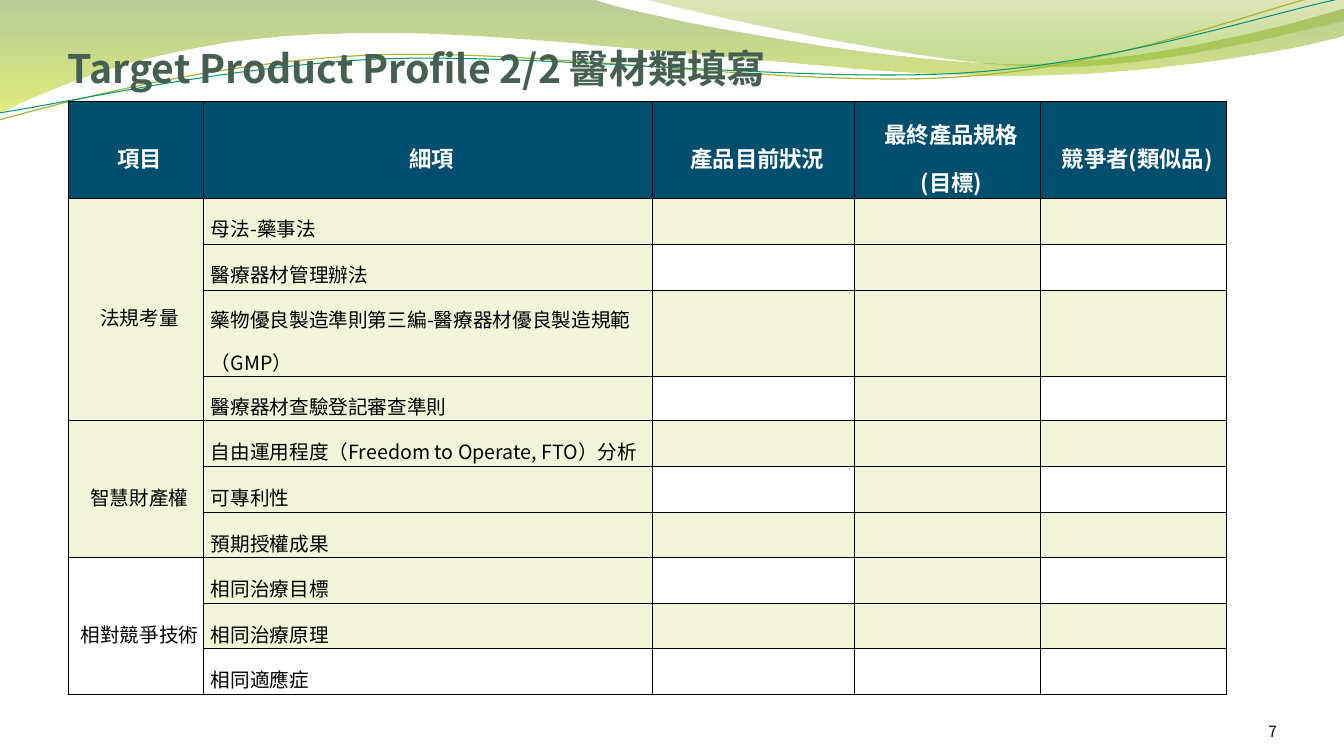
from dataclasses import dataclass
from math import cos, radians, sin

from lxml.etree import SubElement
from pptx import Presentation
from pptx.dml.color import RGBColor
from pptx.enum.text import MSO_ANCHOR as Anchor, PP_ALIGN as Align
from pptx.oxml import parse_xml
from pptx.oxml.ns import nsdecls, qn
from pptx.util import Pt


@dataclass(frozen=True)
class Theme:
    title_color: str = "455F51"
    ink: str = "000000"
    header_ink: str = "FFFFFF"
    header_fill: str = "004E6E"
    band_fill: str = "C0CF3A"
    band_opacity: int = 20
    olive: str = "A8B532"
    teal: str = "029676"
    # Gradient stops: position %, colour, opacity %
    wide_wave: tuple = ((0, "668F1B", 45), (100, "CAE00E", 55))
    right_wave: tuple = ((0, "99A719", 30), (80, "80B814", 45), (100, "80B814", 45))
    font: str = "Noto Sans CJK SC"
    number_font: str = "Noto Sans CJK TC"
    title_size: int = 28
    header_size: int = 16
    body_size: int = 14
    number_size: int = 11
    border_width: float = 0.75


def px(length):
    return round(length * 914400 / 100.8)


def turn(point, pivot, degrees):
    angle = radians(degrees)
    dx, dy = point[0] - pivot[0], point[1] - pivot[1]
    return (pivot[0] + dx * cos(angle) - dy * sin(angle),
            pivot[1] + dx * sin(angle) + dy * cos(angle))


class PageBuilder:
    def __init__(self, page, theme):
        self.page = page
        self.theme = theme

    def format_text(self, frame, size, color, bold=False, font=None, align=None):
        font = font or self.theme.font
        for para in frame.paragraphs:
            para.alignment = align
            for span in para.runs:
                span.font.size = Pt(size)
                span.font.bold = bold
                span.font.name = font
                span.font.color.rgb = RGBColor.from_string(color)
                SubElement(span.font._element, qn("a:ea")).set("typeface", font)

    def freeform(self, start, segments, close):
        """Draw one-point segments as lines and three-point segments as Bezier curves."""
        points = [(px(x), px(y)) for segment in segments for x, y in segment]
        builder = self.page.shapes.build_freeform(px(start[0]), px(start[1]), scale=1.0)
        builder.add_line_segments(points, close=close)
        shape = builder.convert_to_shape()
        shape.shadow.inherit = False
        lines = iter(list(shape.element.iter(qn("a:lnTo"))))
        for segment in segments:
            group = [next(lines) for _ in segment]
            if len(group) == 3:
                group[0].tag = qn("a:cubicBezTo")
                for line in group[1:]:
                    group[0].append(line[0])
                    line.getparent().remove(line)
        return shape

    def wave(self, start, segments, stops):
        shape = self.freeform(start, segments, close=True)
        shape.line.fill.background()
        shape.fill.solid()
        stop_xml = "".join(
            f'<a:gs pos="{place * 1000}"><a:srgbClr val="{color}">'
            f'<a:alpha val="{opacity * 1000}"/></a:srgbClr></a:gs>'
            for place, color, opacity in stops)
        gradient = parse_xml(f'<a:gradFill {nsdecls("a")}><a:gsLst>{stop_xml}</a:gsLst>'
                             '<a:lin ang="5400000" scaled="0"/></a:gradFill>')
        properties = shape.element.spPr
        properties.replace(properties.find(qn("a:solidFill")), gradient)

    def ribbon(self, start, segments, pivot, color, width, tilt=2.7):
        level = [[turn(point, pivot, tilt) for point in segment] for segment in segments]
        shape = self.freeform(turn(start, pivot, tilt), level, close=False)
        shape.rotation = 360 - tilt
        shape.fill.background()
        shape.line.color.rgb = RGBColor.from_string(color)
        shape.line.width = Pt(width)

    def title(self, text, left, top, width, height):
        box = self.page.shapes.title
        box.left, box.top, box.width, box.height = map(px, (left, top, width, height))
        frame = box.text_frame
        frame.text = text
        frame.vertical_anchor = Anchor.MIDDLE
        frame.margin_left = frame.margin_right = frame.margin_bottom = 0
        frame.margin_top = px(5)
        self.format_text(frame, self.theme.title_size, self.theme.title_color,
                         bold=True, align=Align.LEFT)
        # Bring the title in front of the waves
        box.element.getparent().append(box.element)

    def page_number(self, text, left, top, width, height):
        box = self.page.shapes.add_textbox(*map(px, (left, top, width, height)))
        frame = box.text_frame
        frame.word_wrap = True
        frame.text = text
        frame.vertical_anchor = Anchor.BOTTOM
        frame.margin_left = frame.margin_right = frame.margin_top = frame.margin_bottom = 0
        self.format_text(frame, self.theme.number_size, self.theme.ink,
                         font=self.theme.number_font, align=Align.RIGHT)

    def table(self, left, top, widths, heights):
        frame = self.page.shapes.add_table(
            len(heights), len(widths), px(left), px(top), px(sum(widths)), px(sum(heights)))
        table = frame.table
        table.first_row = table.horz_banding = False
        for column, width in zip(table.columns, widths):
            column.width = px(width)
        for row, height in zip(table.rows, heights):
            row.height = px(height)
        return table

    def cell(self, cell, text="", fill=None, opacity=100, header=False, align=Align.CENTER):
        theme = self.theme
        cell.margin_left = cell.margin_right = cell.margin_top = cell.margin_bottom = 0
        cell.vertical_anchor = Anchor.MIDDLE
        if text:
            cell.text_frame.text = text
            for para in cell.text_frame.paragraphs:
                para.line_spacing = 1.5
                para._p.get_or_add_pPr().set("marL", str(px(7)))
            self.format_text(cell.text_frame, theme.header_size if header else theme.body_size,
                             theme.header_ink if header else theme.ink, bold=header, align=align)
        properties = cell._tc.get_or_add_tcPr()
        if fill:
            cell.fill.solid()
            cell.fill.fore_color.rgb = RGBColor.from_string(fill)
            color = properties.find(qn("a:solidFill")).find(qn("a:srgbClr"))
            if opacity < 100:
                SubElement(color, qn("a:alpha")).set("val", str(opacity * 1000))
        else:
            cell.fill.background()
        # Borders come before the fill
        for index, side in enumerate(("lnL", "lnR", "lnT", "lnB")):
            properties.insert(index, parse_xml(
                f'<a:{side} {nsdecls("a")} w="{Pt(theme.border_width)}"><a:solidFill>'
                f'<a:srgbClr val="{theme.ink}"/></a:solidFill></a:{side}>'))


HEADERS = ("項目", "細項", "產品目前狀況", "最終產品規格\n(目標)", "競爭者(類似品)")
SECTIONS = {
    "法規考量": ("母法-藥事法", "醫療器材管理辦法",
             "藥物優良製造準則第三編-醫療器材優良製造規範 （GMP）", "醫療器材查驗登記審查準則"),
    "智慧財產權": ("自由運用程度（Freedom to Operate, FTO）分析", "可專利性", "預期授權成果"),
    "相對競爭技術": ("相同治療目標", "相同治療原理", "相同適應症"),
}
COLUMN_WIDTHS = (136, 449, 202, 186, 186)
ROW_HEIGHTS = (97, 46, 46, 86, 45, 46, 46, 45, 46, 45, 46)


def draw_waves(builder, theme):
    builder.wave((0, 0), [
        [(592, -1)], [(639, 17), (891, 64), (1019, 64)], [(1146, 64), (1287, 26), (1344, 9)],
        [(1345, 36)], [(1322, 44), (1168, 77), (1002, 76)], [(836, 76), (513, 28), (346, 34)],
        [(172, 36), (61, 84), (-2, 114)]], theme.wide_wave)
    builder.wave((643, -1), [
        [(684, 11), (916, 62), (1033, 66)], [(1149, 70), (1292, 32), (1344, 21)],
        [(1344, 0)]], theme.right_wave)
    builder.ribbon((-1, 120), [
        [(64, 102), (212, 62), (372, 55)], [(531, 48), (795, 88), (957, 77)],
        [(1119, 67), (1261, 8), (1341, -10)]], (670, 58), theme.olive, 0.85)
    builder.ribbon((-1, 113), [
        [(62, 104), (220, 67), (380, 59)], [(541, 53), (802, 83), (963, 73)],
        [(1123, 63), (1265, 14), (1344, -2)]], (672, 59), theme.teal, 0.75)


def draw_profile(builder, theme):
    table = builder.table(68, 101, COLUMN_WIDTHS, ROW_HEIGHTS)
    for column, header in enumerate(HEADERS):
        builder.cell(table.cell(0, column), header, theme.header_fill, header=True)

    # Odd rows are tinted; the detail and target columns stay tinted until the last row
    last_row = len(ROW_HEIGHTS) - 1
    row = 1
    for section, details in SECTIONS.items():
        first_row = row
        for detail in details:
            texts = (section if row == first_row else "", detail, "", "", "")
            for column, text in enumerate(texts):
                band_row = first_row if column == 0 else row
                tinted = band_row % 2 or (column in (1, 3) and row < last_row)
                builder.cell(table.cell(row, column), text,
                             theme.band_fill if tinted else None, theme.band_opacity,
                             align=Align.LEFT if column == 1 else Align.CENTER)
            row += 1
        table.cell(first_row, 0).merge(table.cell(row - 1, 0))


def main():
    deck = Presentation()
    deck.slide_width, deck.slide_height = px(1344), px(756)
    theme = Theme()
    builder = PageBuilder(deck.slides.add_slide(deck.slide_layouts[5]), theme)
    draw_waves(builder, theme)
    builder.page_number("7", 1165, 701, 112, 40)
    draw_profile(builder, theme)
    builder.title("Target Product Profile 2/2 醫材類填寫", 68, 36, 1210, 58)
    deck.save("out.pptx")


if __name__ == "__main__":
    main()
